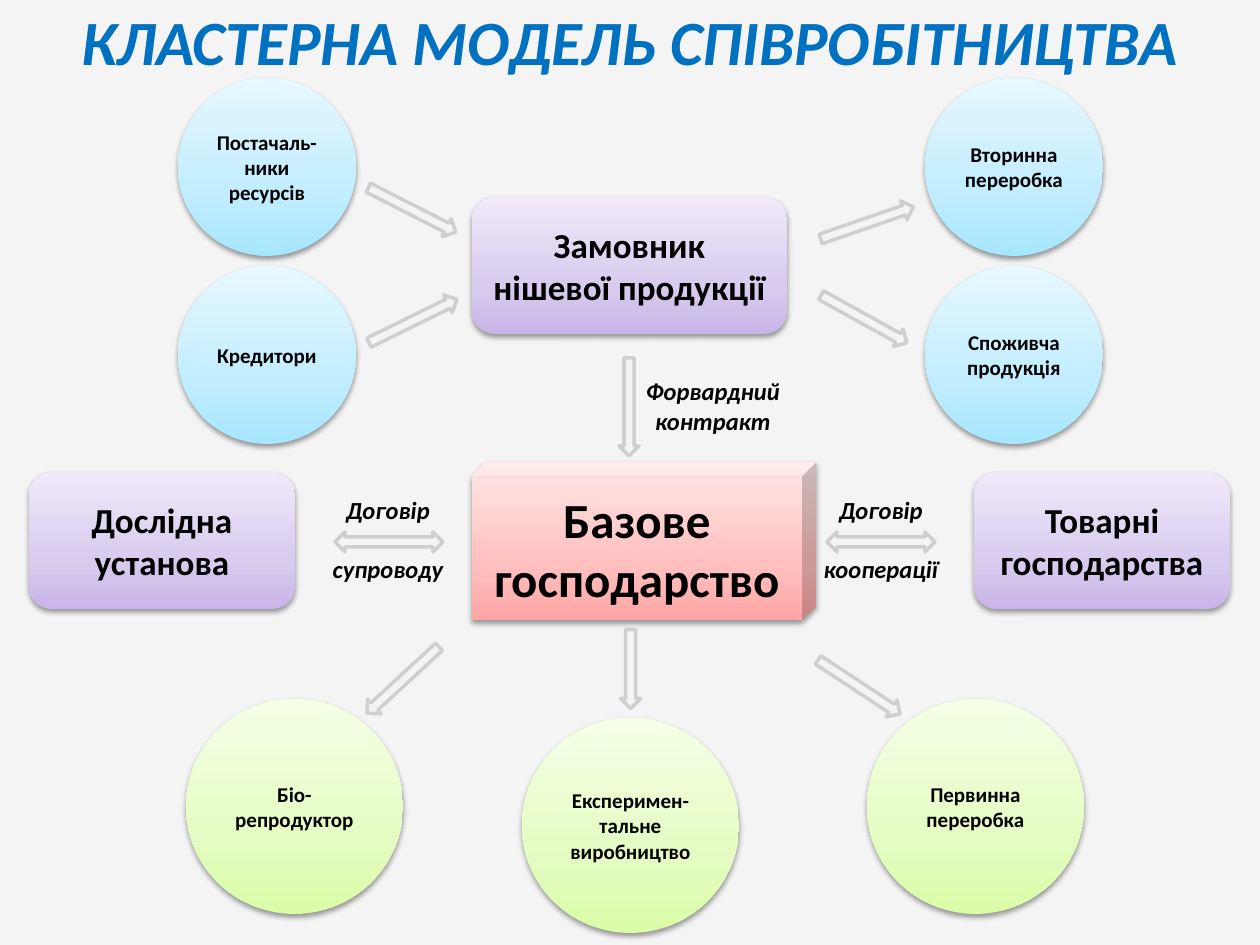
from copy import deepcopy

from lxml.etree import SubElement
from pptx import Presentation
from pptx.dml.color import RGBColor
from pptx.enum.shapes import MSO_SHAPE as SHAPE
from pptx.enum.text import MSO_ANCHOR as ANCHOR, MSO_AUTO_SIZE as AUTO_SIZE, PP_ALIGN as ALIGN
from pptx.oxml.ns import qn
from pptx.util import Pt

PX = 914400 / 126
FONT = "Calibri"
BLACK = RGBColor(0x00, 0x00, 0x00)
BLUE = RGBColor(0x00, 0x70, 0xC0)
PAPER = RGBColor(0xF4, 0xF4, 0xF4)
GREY = RGBColor(0xCF, 0xCF, 0xCF)
RED_FADE = (RGBColor(0xFF, 0xA6, 0xA5), RGBColor(0xFF, 0xC0, 0xBF), RGBColor(0xFF, 0xE7, 0xE7))
VIOLET_FADE = (RGBColor(0xC9, 0xB5, 0xE8), RGBColor(0xD8, 0xCB, 0xEE), RGBColor(0xF0, 0xEA, 0xF9))
SKY_FADE = (RGBColor(0xA7, 0xE6, 0xFF), RGBColor(0xC1, 0xED, 0xFF), RGBColor(0xE7, 0xF8, 0xFF))
LIME_FADE = (RGBColor(0xDA, 0xFD, 0xA7), RGBColor(0xE4, 0xFC, 0xC2), RGBColor(0xF5, 0xFF, 0xE7))
FADE_STOPS = (0, 0.35, 1)

TITLE = "КЛАСТЕРНА МОДЕЛЬ СПІВРОБІТНИЦТВА"
CONTRACTS = [
    ("Договір\nсупроводу", (295, 489, 186, 102), 17),
    ("Договір\nкооперації", (788, 489, 186, 102), 17),
    ("Форвардний\nконтракт", (620, 370, 186, 72), 0),
]
BASE_FARM = ("Базове господарство", (472, 462, 344, 158))
PARTNERS = [
    ("Дослідна установа", (29, 472, 266, 137)),
    ("Товарні господарства", (974, 472, 256, 137)),
    ("Замовник\nнішевої продукції", (472, 197, 315, 137)),
]
MARKET = [
    ("Постачаль-ники ресурсів", (178, 78, 178, 178)),
    ("Вторинна\nпереробка", (925, 78, 178, 178)),
    ("Кредитори", (178, 266, 178, 178)),
    ("Споживча продукція", (925, 266, 178, 178)),
]
PRODUCTION = [
    ("Біо-\nрепродуктор", (186, 699, 217, 215)),
    ("Первинна переробка", (867, 699, 217, 215)),
    ("Експеримен-тальне виробництво", (522, 718, 217, 215)),
]
EXCHANGES = [(335, 532, 108, 0), (827, 532, 108, 0)]
FLOWS = [
    (363, 200, 98, 27), (364, 311, 98, 333.8),
    (818, 213, 98, 340.9), (815, 309, 98, 29),
    (580, 397, 98, 90), (354, 670, 98, 137.3),
    (810, 677, 98, 33.4), (591, 659, 79, 90),
]
ARROW_HEIGHT = 20


def emu(box):
    return [round(length * PX) for length in box]


def write(holder, text, size, color=BLACK, italic=False, anchor=ANCHOR.MIDDLE, gap=0):
    frame = holder.text_frame
    frame.word_wrap = True
    frame.auto_size = AUTO_SIZE.NONE
    frame.vertical_anchor = anchor
    for index, line in enumerate(text.split("\n")):
        paragraph = frame.add_paragraph() if index else frame.paragraphs[0]
        paragraph.alignment = ALIGN.CENTER
        paragraph.space_before = Pt(gap if index else 0)
        run = paragraph.add_run()
        run.text = line
        font = run.font
        font.name, font.size, font.bold, font.italic = FONT, Pt(size), True, italic
        font.color.rgb = color


def add_node(shapes, kind, text, box, fade, size):
    node = shapes.add_shape(kind, *emu(box))
    node.line.fill.background()
    node.fill.gradient()
    node.fill.gradient_angle = 90
    stop_list = node._element.spPr.find(".//" + qn("a:gsLst"))
    stop_list.insert(1, deepcopy(stop_list[0]))
    for stop, position, color in zip(node.fill.gradient_stops, FADE_STOPS, fade):
        stop.position = position
        stop.color.rgb = color
    node.shadow.inherit = False
    effects = node._element.spPr.find(qn("a:effectLst"))
    shadow = SubElement(effects, qn("a:outerShdw"), blurRad="40000", dist="20000",
                        dir="5400000", rotWithShape="0")
    tone = SubElement(shadow, qn("a:srgbClr"), val="000000")
    SubElement(tone, qn("a:alpha"), val="38000")
    write(node, text, size)
    return node


def add_arrow(shapes, kind, left, top, width, angle):
    arrow = shapes.add_shape(kind, *emu((left, top, width, ARROW_HEIGHT)))
    arrow.rotation = angle
    arrow.fill.solid()
    arrow.fill.fore_color.rgb = PAPER
    arrow.line.color.rgb = GREY
    arrow.line.width = Pt(2)
    arrow.shadow.inherit = False


def main():
    deck = Presentation()
    deck.slide_width, deck.slide_height = emu((1260, 945))
    slide = deck.slides.add_slide(deck.slide_layouts[5])
    slide.background.fill.solid()
    slide.background.fill.fore_color.rgb = PAPER
    shapes = slide.shapes

    title = shapes.title
    title.left, title.top, title.width, title.height = emu((63, -10, 1134, 100))
    write(title, TITLE, 36, color=BLUE, italic=True)

    for text, box, gap in CONTRACTS:
        write(shapes.add_textbox(*emu(box)), text, 14, italic=True, anchor=ANCHOR.TOP, gap=gap)

    base_farm = add_node(shapes, SHAPE.CUBE, *BASE_FARM, RED_FADE, 28)
    base_farm.adjustments[0] = 0.09
    for kind, nodes, fade, size in (
        (SHAPE.ROUNDED_RECTANGLE, PARTNERS, VIOLET_FADE, 20),
        (SHAPE.OVAL, MARKET, SKY_FADE, 12),
        (SHAPE.OVAL, PRODUCTION, LIME_FADE, 12),
    ):
        for text, box in nodes:
            add_node(shapes, kind, text, box, fade, size)

    for kind, arrows in ((SHAPE.LEFT_RIGHT_ARROW, EXCHANGES), (SHAPE.RIGHT_ARROW, FLOWS)):
        for arrow in arrows:
            add_arrow(shapes, kind, *arrow)

    deck.save("out.pptx")


if __name__ == "__main__":
    main()
